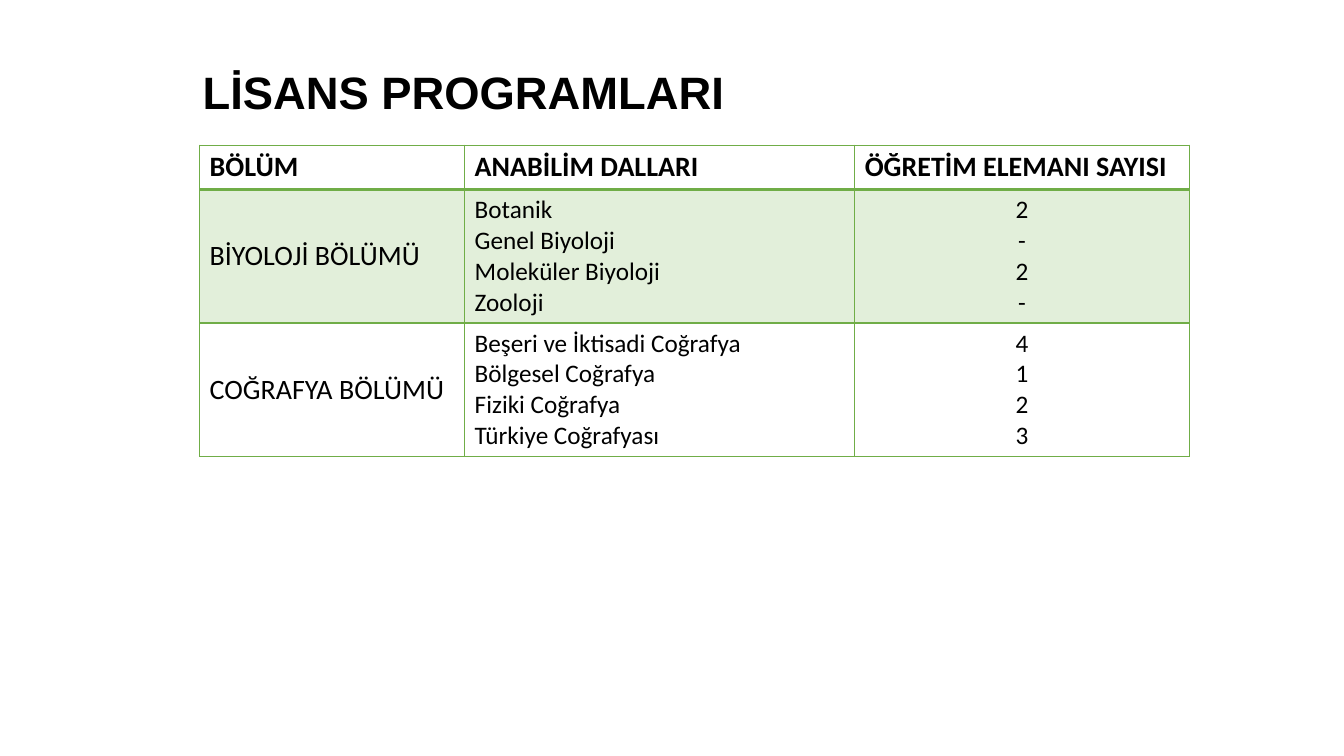
from lxml import etree
from pptx import Presentation
from pptx.dml.color import RGBColor
from pptx.enum import text as t
from pptx.oxml import ns
from pptx.util import Cm, Pt

# Content
TITLE = "LİSANS PROGRAMLARI"
HEAD = ["BÖLÜM", "ANABİLİM DALLARI", "ÖĞRETİM ELEMANI SAYISI"]
DEPTS = [
    ("BİYOLOJİ BÖLÜMÜ", [
        ("Botanik", "2"),
        ("Genel Biyoloji", "-"),
        ("Moleküler Biyoloji", "2"),
        ("Zooloji", "-"),
    ]),
    ("COĞRAFYA BÖLÜMÜ", [
        ("Beşeri ve İktisadi Coğrafya", "4"),
        ("Bölgesel Coğrafya", "1"),
        ("Fiziki Coğrafya", "2"),
        ("Türkiye Coğrafyası", "3"),
    ]),
]

# Look
BLACK = RGBColor(0x00, 0x00, 0x00)
GREEN = RGBColor(0x70, 0xAD, 0x47)
PALE = RGBColor(0xE2, 0xEF, 0xDA)
COLS = [6.68, 9.83, 8.43]
ROWS = [1.12, 3.36, 3.36]
LEFT, TOP = 5.03, 3.66


def write(frame, lines, size=18, bold=False, font="Calibri", align=t.PP_ALIGN.LEFT):
    for i, line in enumerate(lines):
        para = frame.paragraphs[0] if i == 0 else frame.add_paragraph()
        para.alignment = align
        run = para.add_run()
        run.text = line
        run.font.name, run.font.size = font, Pt(size)
        run.font.bold, run.font.color.rgb = bold, BLACK


def edge(cell, base):
    props = cell._tc.get_or_add_tcPr()
    for side in "LRTB":
        width = base if side == "B" else 1
        line = etree.SubElement(props, ns.qn("a:ln" + side), w=str(Pt(width)))
        fill = etree.SubElement(line, ns.qn("a:solidFill"))
        etree.SubElement(fill, ns.qn("a:srgbClr"), val=str(GREEN))


deck = Presentation()
deck.slide_width, deck.slide_height = Cm(33.87), Cm(19.05)
slide = deck.slides.add_slide(deck.slide_layouts[6])

# Title
box = slide.shapes.add_textbox(Cm(4.86), Cm(1.45), Cm(26.68), Cm(1.88))
box.text_frame.word_wrap = True
box.text_frame.vertical_anchor = t.MSO_ANCHOR.MIDDLE
write(box.text_frame, [TITLE], size=32.4, bold=True, font="Arial")
box.text_frame.paragraphs[0].line_spacing = 0.9

# Table frame
grid = slide.shapes.add_table(len(ROWS), len(COLS), Cm(LEFT), Cm(TOP),
                              Cm(sum(COLS)), Cm(sum(ROWS))).table
grid.first_row = grid.horz_banding = False
for col, width in zip(grid.columns, COLS):
    col.width = Cm(width)
for row, height in zip(grid.rows, ROWS):
    row.height = Cm(height)

# Borders and fills
for r, row in enumerate(grid.rows):
    for cell in row.cells:
        edge(cell, 2 if r == 0 else 1)
        if r == 1:
            cell.fill.solid()
            cell.fill.fore_color.rgb = PALE
        else:
            cell.fill.background()

# Cell text
for c, label in enumerate(HEAD):
    write(grid.cell(0, c).text_frame, [label], size=20, bold=True)
for r, (dept, units) in enumerate(DEPTS, 1):
    name, unit, count = grid.rows[r].cells
    write(name.text_frame, [dept], size=20)
    write(unit.text_frame, [u for u, n in units])
    write(count.text_frame, [n for u, n in units], align=t.PP_ALIGN.CENTER)
    name.vertical_anchor = count.vertical_anchor = t.MSO_ANCHOR.MIDDLE

deck.save("out.pptx")
